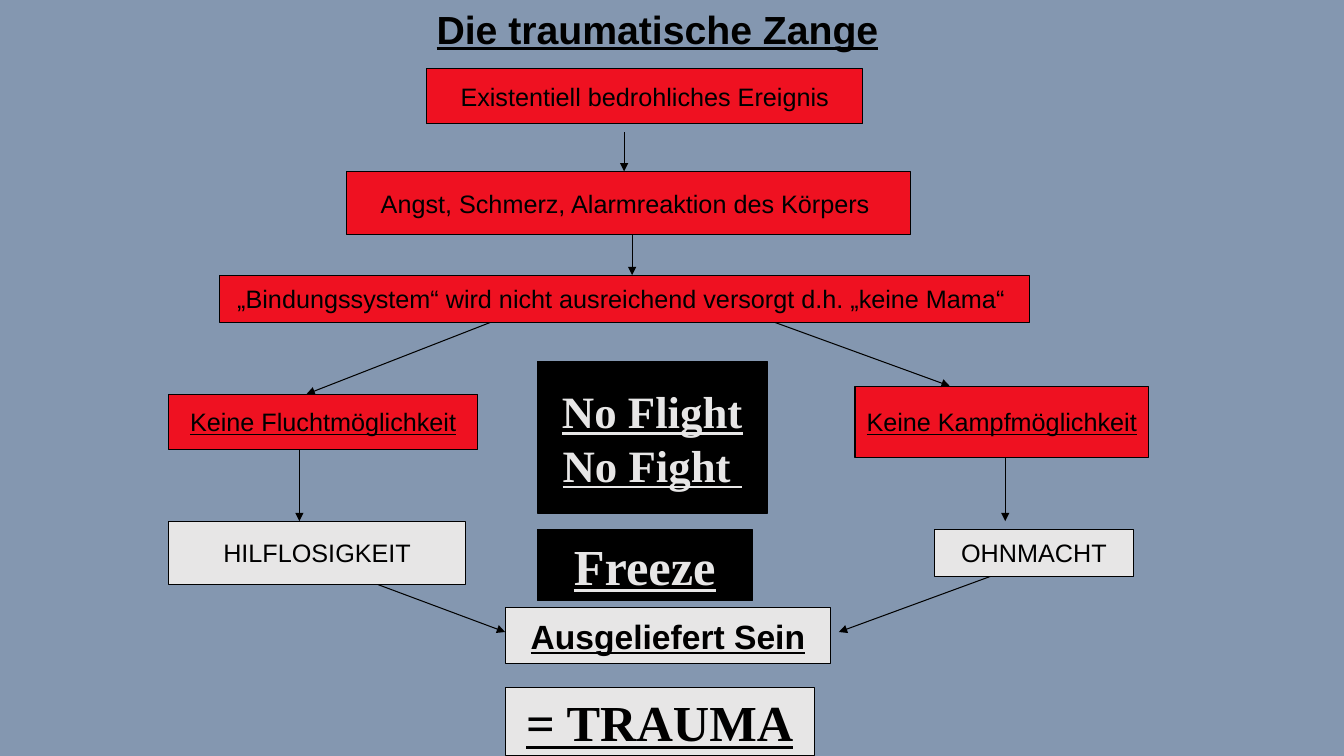
"""Build the slide "Die traumatische Zange", a flow of boxes joined by arrows."""
from lxml.etree import SubElement
from pptx import Presentation
from pptx.dml.color import RGBColor
from pptx.enum.shapes import MSO_CONNECTOR, MSO_SHAPE
from pptx.enum.text import MSO_ANCHOR, MSO_AUTO_SIZE, PP_ALIGN
from pptx.oxml.ns import qn
from pptx.util import Inches, Pt

COLORS = {"background": "8497B0", "red": "EF1121", "light": "E7E6E6", "black": "000000"}

TITLE = "Die traumatische Zange"
TITLE_AREA = (4.23, 0, 4.6, 0.57)

STYLES = {
    "title": ("Arial", 28, True, True, "black", None),
    "cause": ("Arial", 18, False, False, "black", "red"),
    "blocked": ("Arial", 18, False, True, "black", "red"),
    "feeling": ("Arial", 18, False, False, "black", "light"),
    "outcome": ("Arial", 24, True, True, "black", "light"),
    "trauma": ("Times New Roman", 36, True, True, "black", "light"),
    "reaction": ("Times New Roman", 32, True, True, "light", "black"),
    "freeze": ("Times New Roman", 36, True, True, "light", "black"),
}

BOXES = {
    "alarm": ("cause", (3.44, 1.7, 5.59, 0.63), ["Angst, Schmerz, Alarmreaktion des Körpers "]),
    "event": ("cause", (4.23, 0.68, 4.33, 0.55), ["Existentiell bedrohliches Ereignis"]),
    "bonding": ("cause", (2.18, 2.73, 8.03, 0.47),
                ["„Bindungssystem“ wird nicht ausreichend versorgt d.h. „keine Mama“ "]),
    "no_flight": ("blocked", (1.67, 3.91, 3.07, 0.55), ["Keine Fluchtmöglichkeit"]),
    "helpless": ("feeling", (1.67, 5.17, 2.95, 0.63), ["HILFLOSIGKEIT"]),
    "no_fight": ("blocked", (8.48, 3.83, 2.91, 0.71), ["Keine Kampfmöglichkeit"]),
    "powerless": ("feeling", (9.27, 5.25, 1.97, 0.47), ["OHNMACHT"]),
    "exposed": ("outcome", (5.01, 6.03, 3.23, 0.55), ["Ausgeliefert Sein"]),
    "trauma": ("trauma", (5.01, 6.82, 3.07, 0.68), ["= TRAUMA"]),
    "reactions": ("reaction", (5.33, 3.59, 2.28, 1.5), ["No Flight", "No Fight "]),
    "freeze": ("freeze", (5.33, 5.25, 2.13, 0.71), ["Freeze"]),
}

# (source, x, distance below its bottom), (target, x, distance below its top)
ARROWS = [
    (("event", 6.19, 0.08), ("alarm", 6.19, 0)),
    (("alarm", 6.27, 0), ("bonding", 6.27, 0)),
    (("bonding", 4.86, 0), ("no_flight", 3.04, 0)),
    (("bonding", 7.69, 0), ("no_fight", 9.42, 0)),
    (("no_flight", 2.97, 0), ("helpless", 2.97, 0)),
    (("no_fight", 9.97, 0), ("powerless", 9.97, -0.08)),
    (("helpless", 3.75, 0), ("exposed", 5.01, 0.24)),
    (("powerless", 9.82, 0), ("exposed", 8.32, 0.24)),
]


def color(name):
    return RGBColor.from_string(COLORS[name])


def outline(line):
    line.color.rgb = color("black")
    line.width = Pt(0.75)


def write(frame, lines, style, align, anchor):
    family, size, bold, underline, ink, _ = STYLES[style]
    frame.text = "\n".join(lines)
    frame.word_wrap = False
    frame.auto_size = MSO_AUTO_SIZE.NONE
    frame.vertical_anchor = anchor
    for paragraph in frame.paragraphs:
        paragraph.alignment = align
        font = paragraph.font
        font.name, font.size = family, Pt(size)
        font.bold, font.underline = bold, underline
        font.color.rgb = color(ink)


def add_title(slide):
    heading = slide.shapes.title
    heading.left, heading.top, heading.width, heading.height = map(Inches, TITLE_AREA)
    write(heading.text_frame, [TITLE], "title", PP_ALIGN.LEFT, MSO_ANCHOR.TOP)


def add_box(slide, style, area, lines):
    box = slide.shapes.add_shape(MSO_SHAPE.RECTANGLE, *map(Inches, area))
    box.shadow.inherit = False
    box.fill.solid()
    box.fill.fore_color.rgb = color(STYLES[style][-1])
    outline(box.line)
    write(box.text_frame, lines, style, PP_ALIGN.CENTER, MSO_ANCHOR.MIDDLE)


def add_arrow(slide, start, end):
    source, start_x, below_bottom = start
    target, end_x, below_top = end
    _, top, _, height = BOXES[source][1]
    start_y = top + height + below_bottom
    end_y = BOXES[target][1][1] + below_top
    arrow = slide.shapes.add_connector(
        MSO_CONNECTOR.STRAIGHT, *map(Inches, (start_x, start_y, end_x, end_y)))
    outline(arrow.line)
    SubElement(arrow.line._get_or_add_ln(), qn("a:tailEnd"), type="triangle")
    SubElement(arrow._element.spPr, qn("a:effectLst"))


def main():
    deck = Presentation()
    deck.slide_width, deck.slide_height = Inches(13.33), Inches(7.5)
    slide = deck.slides.add_slide(deck.slide_layouts[5])
    slide.background.fill.solid()
    slide.background.fill.fore_color.rgb = color("background")
    add_title(slide)
    for style, area, lines in BOXES.values():
        add_box(slide, style, area, lines)
    for start, end in ARROWS:
        add_arrow(slide, start, end)
    deck.save("out.pptx")


if __name__ == "__main__":
    main()
